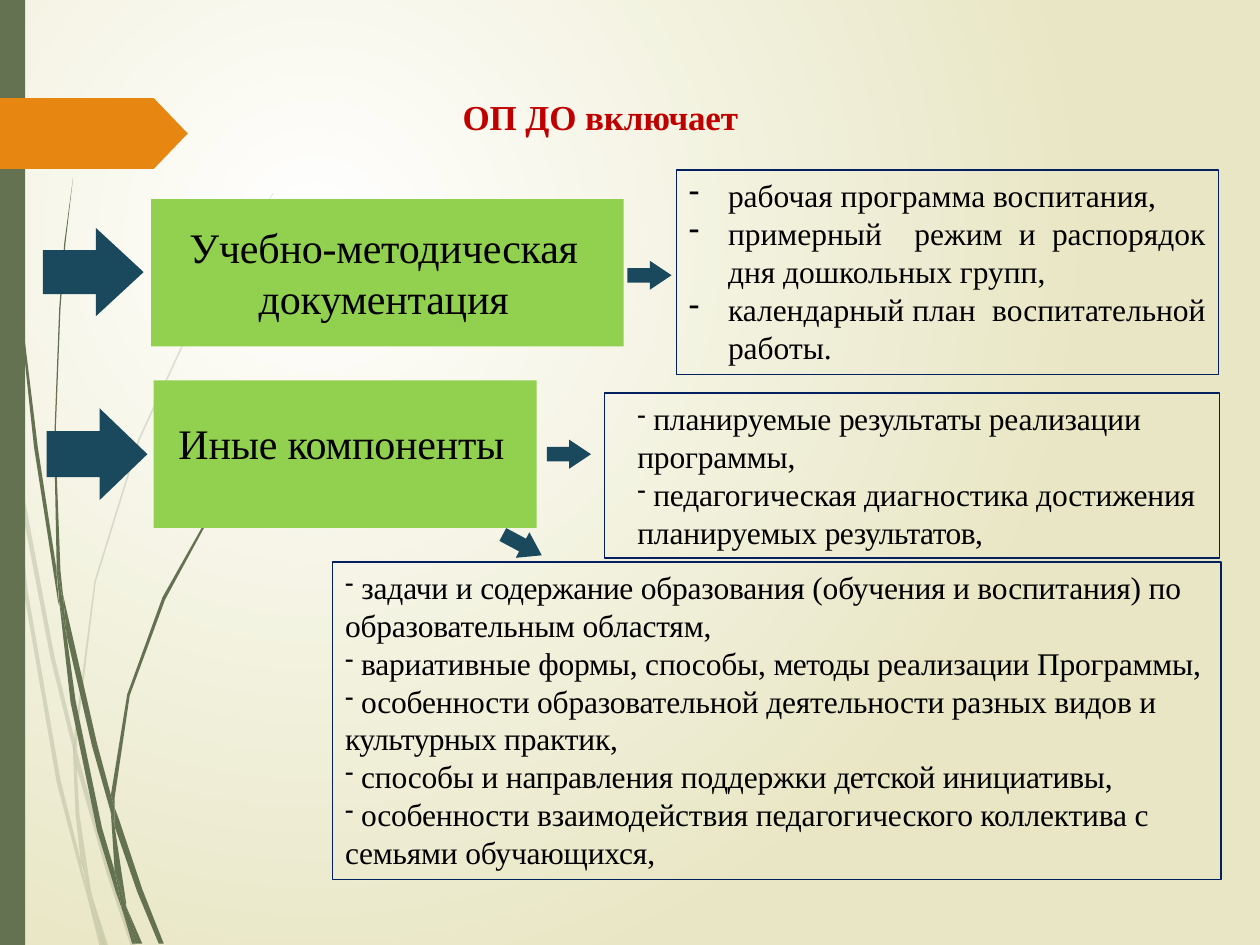
"""Builds the slide about the contents of the preschool education programme."""
from lxml.etree import SubElement
from pptx import Presentation
from pptx.dml.color import RGBColor
from pptx.enum.shapes import MSO_SHAPE
from pptx.enum.text import MSO_ANCHOR, MSO_AUTO_SIZE, PP_ALIGN
from pptx.oxml.ns import qn
from pptx.util import Pt

PX = 9144
FONT = "Times New Roman"
WHITE = RGBColor(0xFF, 0xFF, 0xFF)
CREAM = RGBColor(0xE8, 0xE6, 0xC4)
OLIVE = RGBColor(0x64, 0x72, 0x52)
ORANGE = RGBColor(0xE7, 0x87, 0x12)
RED = RGBColor(0xC0, 0x00, 0x00)
GREEN = RGBColor(0x92, 0xD0, 0x50)
TEAL = RGBColor(0x1A, 0x49, 0x5D)
NAVY = RGBColor(0x00, 0x20, 0x60)
BLACK = RGBColor(0x00, 0x00, 0x00)

PALE_WISPS = [
    [(8, 350), (6, 322), (0, 282), (0, 299), (7, 344)],
    [(40, 522), (59, 599), (59, 586), (43, 520), (10, 345), (12, 376)],
    [(64, 607), (61, 596), (61, 610), (85, 694), (104, 751), (108, 751), (88, 692)],
    [(83, 751), (86, 751), (73, 711)],
    [(64, 683), (48, 619), (22, 469), (12, 376), (8, 350), (19, 470), (45, 621),
     (64, 693), (70, 714), (69, 707)],
    [(58, 599), (60, 646), (64, 683), (67, 692), (73, 711), (72, 706), (63, 646),
     (61, 610), (61, 608)],
    [(61, 584), (76, 462), (111, 349), (159, 245), (187, 198), (201, 175), (217, 154),
     (217, 153), (201, 175), (186, 197), (158, 244), (110, 348), (75, 461), (59, 584),
     (59, 586), (61, 596)],
    [(70, 714), (79, 751), (82, 751)],
    [(61, 608), (61, 610), (61, 596), (59, 586), (58, 599)],
    [(67, 692), (65, 683), (69, 707), (70, 714), (82, 751), (83, 751), (73, 711)],
]
DARK_WISPS = [
    [(5, 110), (14, 233), (27, 355), (46, 477), (47, 481), (45, 457), (45, 453),
     (30, 355), (15, 232), (6, 109), (4, 48), (3, 0), (2, 0), (3, 48)],
    [(73, 592), (88, 645), (88, 633), (88, 631), (77, 590), (50, 472), (53, 505)],
    [(94, 649), (91, 641), (91, 656), (109, 708), (126, 749), (130, 749), (113, 706)],
    [(91, 691), (81, 657), (60, 556), (53, 505), (47, 477), (56, 557), (77, 659),
     (92, 708), (97, 722), (96, 717)],
    [(50, 472), (48, 453), (44, 349), (48, 245), (52, 193), (58, 141), (51, 193),
     (47, 245), (43, 349), (45, 449), (49, 472)],
    [(110, 749), (113, 749), (100, 719)],
    [(47, 477), (53, 505), (50, 472), (49, 472), (45, 449), (45, 453)],
    [(91, 633), (103, 552), (131, 476), (169, 406), (191, 374), (203, 359), (216, 344),
     (215, 344), (203, 358), (191, 373), (168, 405), (129, 474), (101, 551), (88, 631),
     (91, 641)],
    [(97, 722), (105, 749), (108, 749)],
    [(88, 645), (91, 691), (96, 706), (100, 719), (100, 716), (91, 656), (90, 651)],
    [(88, 645), (90, 651), (91, 656), (91, 641), (88, 631), (88, 633)],
    [(96, 706), (91, 691), (96, 717), (97, 722), (108, 749), (110, 749), (100, 719)],
]
HEADINGS = [
    ((173, 75, 607, 35), "ОП ДО включает", {"size": Pt(20), "bold": True}, RED),
    ((139, 175, 331, 82), "Учебно-методическая документация", {"size": Pt(24)}, BLACK),
    ((135, 330, 272, 42), "Иные компоненты", {"size": Pt(24)}, BLACK),
]
ARROWS = [
    ((34, 181, 80, 70), 0.54, 0),
    ((37, 324, 80, 73), 0.52, 0),
    ((498, 207, 35, 23), 0.75, 0),
    ((434, 349, 35, 23), 0.75, 0),
    ((397, 421, 35, 23), 0.75, 28.1),
]
METHODICAL_ITEMS = [
    "рабочая программа воспитания,",
    "примерный  режим и распорядок дня дошкольных групп,",
    "календарный план  воспитательной работы.",
]
RESULT_ITEMS = [
    " планируемые |результаты |реализации программы,",
    " педагогическая диагностика достижения планируемых |результатов,",
]
CONTENT_ITEMS = [
    " |з|адачи и |содержание |образования (обучения и воспитания) по образовательным областям,",
    " вариативные формы, способы, |методы |реализации Программы,",
    " особенности образовательной деятельности разных видов и |культурных |практик,",
    " способы и направления поддержки |детской |инициативы,",
    " особенности взаимодействия педагогического коллектива с семьями обучающихся|,",
]


class SlideBuilder:
    """Holds the style and the current slide."""

    def __init__(self, slide):
        self.slide = slide

    def background(self, inner, outer):
        """Fills the slide with a round gradient."""
        fill = self.slide.background.fill
        fill.gradient()
        for stop, color in zip(fill.gradient_stops, (inner, outer)):
            stop.color.rgb = color
        linear = next(self.slide.element.iter(qn("a:lin")))
        gradient = linear.getparent()
        gradient.remove(linear)
        circle = SubElement(gradient, qn("a:path"), {"path": "circle"})
        SubElement(circle, qn("a:fillToRect"),
                   {"l": "50000", "t": "50000", "r": "100000", "b": "100000"})

    def paint(self, shape, color):
        """Gives a shape a plain fill without line or shadow."""
        shape.shadow.inherit = False
        shape.fill.solid()
        shape.fill.fore_color.rgb = color
        shape.line.fill.background()

    def shape(self, kind, box, color, adjustments=(), rotation=0):
        """Adds a filled preset shape."""
        shape = self.slide.shapes.add_shape(kind, *(value * PX for value in box))
        for index, value in enumerate(adjustments):
            shape.adjustments[index] = value
        shape.rotation = rotation
        self.paint(shape, color)

    def wisps(self, outlines, color, opacity=100):
        """Adds a group of grass blades."""
        group = self.slide.shapes.add_group_shape()
        for start, *points in outlines:
            builder = group.shapes.build_freeform(*start, scale=PX)
            builder.add_line_segments(points, close=True)
            blade = builder.convert_to_shape()
            self.paint(blade, color)
            if opacity < 100:
                fill_color = next(blade.element.spPr.iter(qn("a:srgbClr")))
                SubElement(fill_color, qn("a:alpha"), {"val": str(opacity * 1000)})

    def text_frame(self, box):
        """Adds a wrapping text box and returns it with its frame."""
        shape = self.slide.shapes.add_textbox(*(value * PX for value in box))
        frame = shape.text_frame
        settings = {"word_wrap": True, "auto_size": MSO_AUTO_SIZE.SHAPE_TO_FIT_TEXT,
                    "vertical_anchor": MSO_ANCHOR.TOP}
        for name, value in settings.items():
            setattr(frame, name, value)
        return shape, frame

    def run(self, paragraph, text, font_format, color, spacing):
        """Adds a run of styled text."""
        run = paragraph.add_run()
        run.text = text
        for name, value in {"name": FONT, **font_format}.items():
            setattr(run.font, name, value)
        run.font.color.rgb = color
        run.font._element.set("spc", str(spacing))

    def heading(self, box, text, font_format, color):
        """Adds centred text without side margins."""
        frame = self.text_frame(box)[1]
        margins = {"margin_left": 0, "margin_top": PX, "margin_right": 0, "margin_bottom": 0}
        for name, value in margins.items():
            setattr(frame, name, value)
        paragraph = frame.paragraphs[0]
        paragraph.alignment = PP_ALIGN.CENTER
        paragraph.space_before = Pt(1)
        self.run(paragraph, text, font_format, color, -10)

    def bullet_box(self, box, items, margin=0, indent=0, size=80,
                   alignment=PP_ALIGN.LEFT, spacings=(-10, -30)):
        """Adds a bordered list; bars in an item switch the letter spacing."""
        shape, frame = self.text_frame(box)
        shape.line.color.rgb = NAVY
        shape.line.width = Pt(0.75)
        for index, item in enumerate(items):
            paragraph = frame.add_paragraph() if index else frame.paragraphs[0]
            paragraph.alignment = alignment
            properties = paragraph._p.get_or_add_pPr()
            properties.set("marL", str(margin * PX))
            properties.set("indent", str(indent * PX))
            SubElement(properties, qn("a:buSzPct"), {"val": str(size * 1000)})
            SubElement(properties, qn("a:buChar"), {"char": "-"})
            for part, text in enumerate(item.split("|")):
                self.run(paragraph, text, {"size": Pt(18)}, BLACK, spacings[part % 2])


def main():
    """Builds and saves the slide."""
    presentation = Presentation()
    presentation.slide_width, presentation.slide_height = 1000 * PX, 750 * PX
    builder = SlideBuilder(presentation.slides.add_slide(presentation.slide_layouts[6]))
    builder.background(WHITE, CREAM)
    builder.wisps(PALE_WISPS, OLIVE, opacity=20)
    builder.wisps(DARK_WISPS, OLIVE)
    builder.shape(MSO_SHAPE.RECTANGLE, (0, 0, 20, 750), OLIVE)
    builder.shape(MSO_SHAPE.PENTAGON, (0, 78, 149, 56), ORANGE, [0.48])
    for box in ((120, 158, 375, 117), (122, 302, 304, 117)):
        builder.shape(MSO_SHAPE.RECTANGLE, box, GREEN)
    for heading in HEADINGS:
        builder.heading(*heading)
    builder.bullet_box((537, 135, 430, 162), METHODICAL_ITEMS, margin=31, indent=-31,
                       size=100, alignment=PP_ALIGN.JUSTIFY, spacings=(0, 0))
    builder.bullet_box((480, 312, 488, 131), RESULT_ITEMS, margin=16)
    builder.bullet_box((264, 446, 705, 252), CONTENT_ITEMS)
    for box, head, rotation in ARROWS:
        builder.shape(MSO_SHAPE.RIGHT_ARROW, box, TEAL, [0.5, head], rotation)
    presentation.save("out.pptx")


if __name__ == "__main__":
    main()
